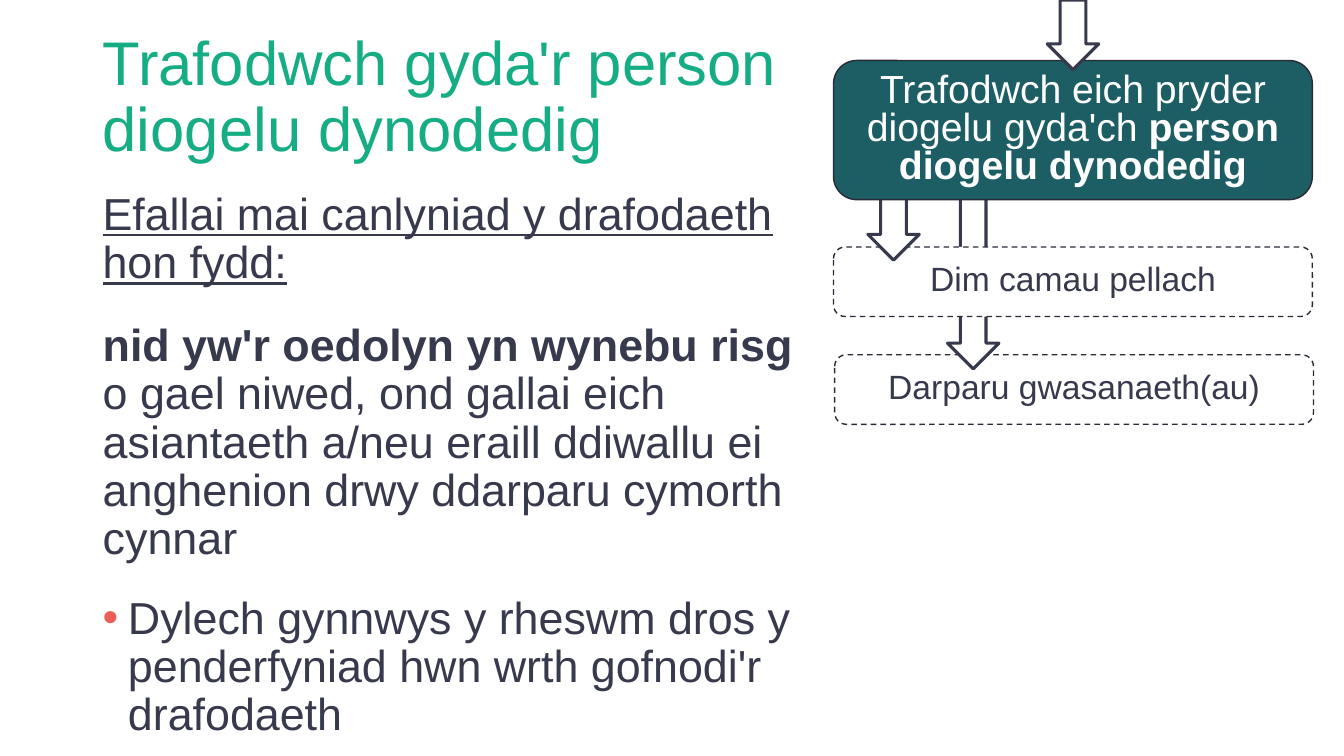
"""Build the slide on talking to the designated safeguarding person."""
from lxml.etree import SubElement
from pptx import Presentation
from pptx.dml.color import RGBColor
from pptx.enum.dml import MSO_LINE
from pptx.enum.shapes import MSO_SHAPE
from pptx.enum.text import MSO_ANCHOR, MSO_AUTO_SIZE, PP_ALIGN
from pptx.oxml.ns import qn
from pptx.util import Pt

GREEN, INK, EDGE, TEAL, WHITE, CORAL = "16AD85", "37394C", "292A38", "1C5E64", "FFFFFF", "EB5E57"

TITLE = [("Trafodwch gyda'r person diogelu dynodedig", {})]
INTRO = [("Efallai mai canlyniad y drafodaeth hon fydd:", {"underline": True})]
OUTCOME = [
    ("nid yw'r oedolyn yn wynebu risg ", {"bold": True}),
    ("o gael niwed, ond gallai eich asiantaeth a/neu eraill ddiwallu ei "
     "anghenion drwy ddarparu cymorth cynnar", {}),
]
RECORD = [("Dylech gynnwys y rheswm dros y penderfyniad hwn wrth gofnodi'r drafodaeth", {})]
DISCUSS = [
    ("Trafodwch eich pryder diogelu gyda'ch ", {}),
    ("person diogelu dynodedig", {"bold": True}),
]

STEP_W, ARROW_W = 342, 36.7
STEPS = [
    {"runs": [("Darparu gwasanaeth(au)", {})], "box": (596.2, 253.4, 49.7), "size": 24,
     "fill": WHITE, "ink": INK, "dash": MSO_LINE.DASH, "arrow": (676.8, 132.5, 131)},
    {"runs": [("Dim camau pellach", {})], "box": (595.4, 176.4, 49.7), "size": 24,
     "fill": WHITE, "ink": INK, "dash": MSO_LINE.DASH, "arrow": (619.9, 136.1, 49.7)},
    {"runs": DISCUSS, "box": (595.4, 43.2, 99.4), "size": 28,
     "fill": TEAL, "ink": WHITE, "dash": None, "arrow": (748.1, 0, 49.7)},
]


def rgb(value):
    return RGBColor.from_string(value)


def apply(obj, **values):
    for name, value in values.items():
        setattr(obj, name, value)


def place(sp, left, top, width, height):
    apply(sp, left=Pt(left), top=Pt(top), width=Pt(width), height=Pt(height))


def set_bullet(p, char, indent):
    pPr = p._p.get_or_add_pPr()
    pPr.set("marL", str(Pt(indent)))
    pPr.set("indent", str(-Pt(indent)))
    if char:
        color = SubElement(pPr, qn("a:buClr"))
        SubElement(color, qn("a:srgbClr"), val=CORAL)
        SubElement(pPr, qn("a:buFont"), typeface="Arial")
        SubElement(pPr, qn("a:buChar"), char=char)
    else:
        SubElement(pPr, qn("a:buNone"))


def write(p, runs, size, color, spacing=0.9, before=0, after=0, align=PP_ALIGN.LEFT):
    apply(p, line_spacing=spacing, space_before=Pt(before), space_after=Pt(after),
          alignment=align)
    for text, extra in runs:
        r = p.add_run()
        r.text = text
        apply(r.font, name="Arial", size=Pt(size), **extra)
        r.font.color.rgb = rgb(color)


def add_block(s, kind, box, fill, line, width, dash=None):
    sp = s.shapes.add_shape(kind, *map(Pt, box))
    sp.shadow.inherit = False
    sp.fill.solid()
    sp.fill.fore_color.rgb = rgb(fill)
    sp.line.color.rgb = rgb(line)
    apply(sp.line, width=Pt(width), dash_style=dash)
    return sp


def add_step(s, step):
    left, top, height = step["box"]
    sp = add_block(s, MSO_SHAPE.ROUNDED_RECTANGLE, (left, top, STEP_W, height),
                   step["fill"], EDGE, 1, step["dash"])
    apply(sp.text_frame, word_wrap=True, vertical_anchor=MSO_ANCHOR.MIDDLE)
    write(sp.text_frame.paragraphs[0], step["runs"], step["size"], step["ink"],
          spacing=0.8, align=PP_ALIGN.CENTER)
    left, top, height = step["arrow"]
    add_block(s, MSO_SHAPE.DOWN_ARROW, (left, top, ARROW_W, height), WHITE, INK, 2.25)


def main():
    prs = Presentation()
    apply(prs, slide_width=Pt(960), slide_height=Pt(540))
    s = prs.slides.add_slide(prs.slide_layouts[1])
    title, body = s.placeholders

    place(title, 66.2, 45.4, 542.2, 49.7)
    apply(title.text_frame, word_wrap=True, auto_size=MSO_AUTO_SIZE.NONE,
          vertical_anchor=MSO_ANCHOR.MIDDLE)
    write(title.text_frame.paragraphs[0], TITLE, 44, GREEN)

    place(body, 66.2, 176.4, 527, 298.8)
    tf = body.text_frame
    apply(tf, word_wrap=True, auto_size=MSO_AUTO_SIZE.NONE,
          vertical_anchor=MSO_ANCHOR.TOP, margin_top=Pt(54))
    outcome, record = tf.paragraphs[0], tf.add_paragraph()
    set_bullet(outcome, None, 0)
    write(outcome, OUTCOME, 32, INK, after=12)
    set_bullet(record, "•", 18)
    write(record, RECORD, 32, INK, before=10, after=12)

    for step in STEPS:
        add_step(s, step)

    intro = s.shapes.add_textbox(*map(Pt, (66.2, 133.2, 494, 40.3)))
    intro.text_frame.word_wrap = True
    write(intro.text_frame.paragraphs[0], INTRO, 32, INK, after=6)

    prs.save("out.pptx")


if __name__ == "__main__":
    main()
